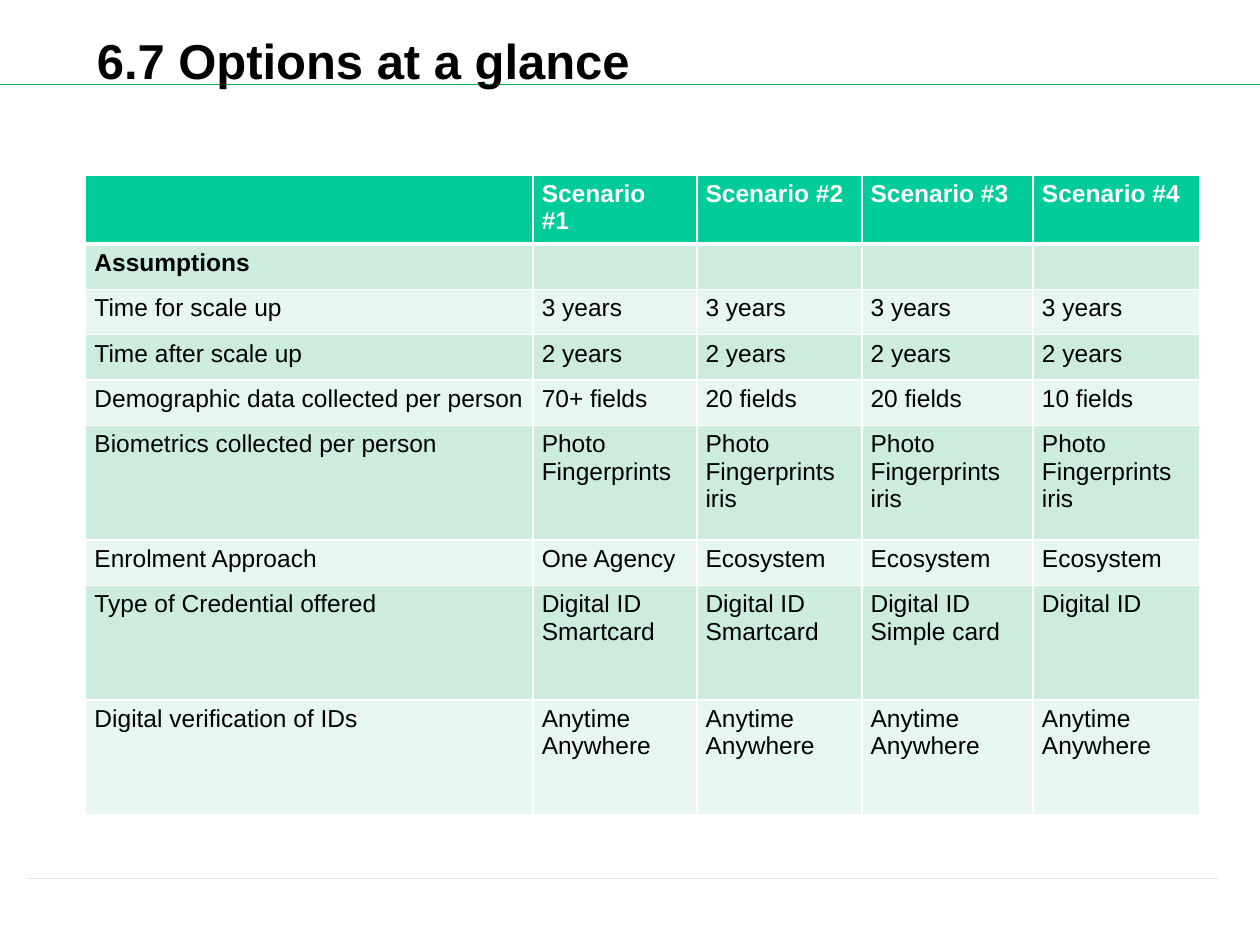
import pptx
import pptx.dml.color
import pptx.enum.shapes
import pptx.enum.text
import pptx.oxml
import pptx.oxml.ns
import pptx.util
from lxml import etree

WIDTH, HEIGHT = 10, 7.5
FONT = "Arial"
BLACK, WHITE = "000000", "FFFFFF"
HEADER_FILL = "00CC99"
BAND_FILLS = ["E7F6EF", "CCECDE"]
COLUMN_WIDTHS = [3.55, 1.3, 1.31, 1.36, 1.32]
ROW, TALL_ROW = 0.36, 0.91
TALL_LABELS = ("Biometrics", "Type", "Digital")

PRINTS = "Photo\nFingerprints"
PRINTS_IRIS = PRINTS + "\niris"
SMARTCARD = "Digital ID\nSmartcard"
ROWS = [
    ["", "Scenario\v#1", "Scenario #2", "Scenario #3", "Scenario #4"],
    ["Assumptions"] + [""] * 4,
    ["Time for scale up"] + ["3 years"] * 4,
    ["Time after scale up"] + ["2 years"] * 4,
    ["Demographic data collected per person",
     "70+ fields", "20 fields", "20 fields", "10 fields"],
    ["Biometrics collected per person", PRINTS] + [PRINTS_IRIS] * 3,
    ["Enrolment Approach", "One Agency"] + ["Ecosystem"] * 3,
    ["Type of Credential offered", SMARTCARD, SMARTCARD,
     "Digital ID\nSimple card", "Digital ID"],
    ["Digital verification of IDs"] + ["Anytime\nAnywhere"] * 4,
]


def rgb(value):
    return pptx.dml.color.RGBColor.from_string(value)


def inches(*values):
    return [pptx.util.Inches(v) for v in values]


def style_text(tf, size, color, bold):
    for p in tf.paragraphs:
        p.font.size = pptx.util.Pt(size)
        for r in p.runs:
            r.font.name = FONT
            r.font.size = pptx.util.Pt(size)
            r.font.bold = bold
            r.font.color.rgb = rgb(color)


def add_rule(s, left, right, y, color, weight):
    """Draw a horizontal line across the slide."""
    line = s.shapes.add_connector(
        pptx.enum.shapes.MSO_CONNECTOR.STRAIGHT, *inches(left, y, right, y))
    line.line.color.rgb = rgb(color)
    line.line.width = pptx.util.Pt(weight)
    etree.SubElement(line._element.spPr, pptx.oxml.ns.qn("a:effectLst"))


def add_title(s, text):
    tf = s.shapes.add_textbox(*inches(0.67, 0.19, 8.22, 0.62)).text_frame
    tf.word_wrap = True
    tf.vertical_anchor = pptx.enum.text.MSO_ANCHOR.TOP
    tf.text = text
    style_text(tf, 28, BLACK, True)


def set_borders(cell, bottom):
    """Put white borders before the fill, as the schema orders them."""
    weights = {"lnL": 1, "lnR": 1, "lnT": 1, "lnB": bottom}
    for i, (tag, weight) in enumerate(weights.items()):
        border = pptx.oxml.parse_xml(
            f'<a:{tag} {pptx.oxml.ns.nsdecls("a")} w="{pptx.util.Pt(weight)}">'
            f'<a:solidFill><a:srgbClr val="{WHITE}"/></a:solidFill></a:{tag}>')
        cell._tc.get_or_add_tcPr().insert(i, border)


def fill_cell(cell, text, row):
    header = row == 0
    cell.margin_left = cell.margin_right = pptx.util.Inches(0.07)
    cell.margin_top = cell.margin_bottom = pptx.util.Inches(0.04)
    cell.fill.solid()
    cell.fill.fore_color.rgb = rgb(HEADER_FILL if header else BAND_FILLS[row % 2])
    set_borders(cell, 3 if header else 1)
    cell.text_frame.text = text
    style_text(cell.text_frame, 14, WHITE if header else BLACK, row < 2)


def add_options_table(s):
    heights = [TALL_ROW if row[0].startswith(TALL_LABELS) else ROW for row in ROWS]
    table = s.shapes.add_table(
        len(ROWS), len(COLUMN_WIDTHS),
        *inches(0.68, 1.39, sum(COLUMN_WIDTHS), sum(heights))).table
    for column, width in zip(table.columns, COLUMN_WIDTHS):
        column.width = pptx.util.Inches(width)
    for i, (texts, height) in enumerate(zip(ROWS, heights)):
        table.rows[i].height = pptx.util.Inches(height)
        for j, text in enumerate(texts):
            fill_cell(table.cell(i, j), text, i)


def main():
    prs = pptx.Presentation()
    prs.slide_width, prs.slide_height = inches(WIDTH, HEIGHT)
    s = prs.slides.add_slide(prs.slide_layouts[6])
    add_rule(s, 0, WIDTH, 0.67, "00B050", 0.75)
    add_rule(s, 0.22, 9.67, 6.97, "E0E6EE", 0.25)
    add_title(s, "6.7 Options at a glance")
    add_options_table(s)
    prs.save("out.pptx")


if __name__ == "__main__":
    main()
